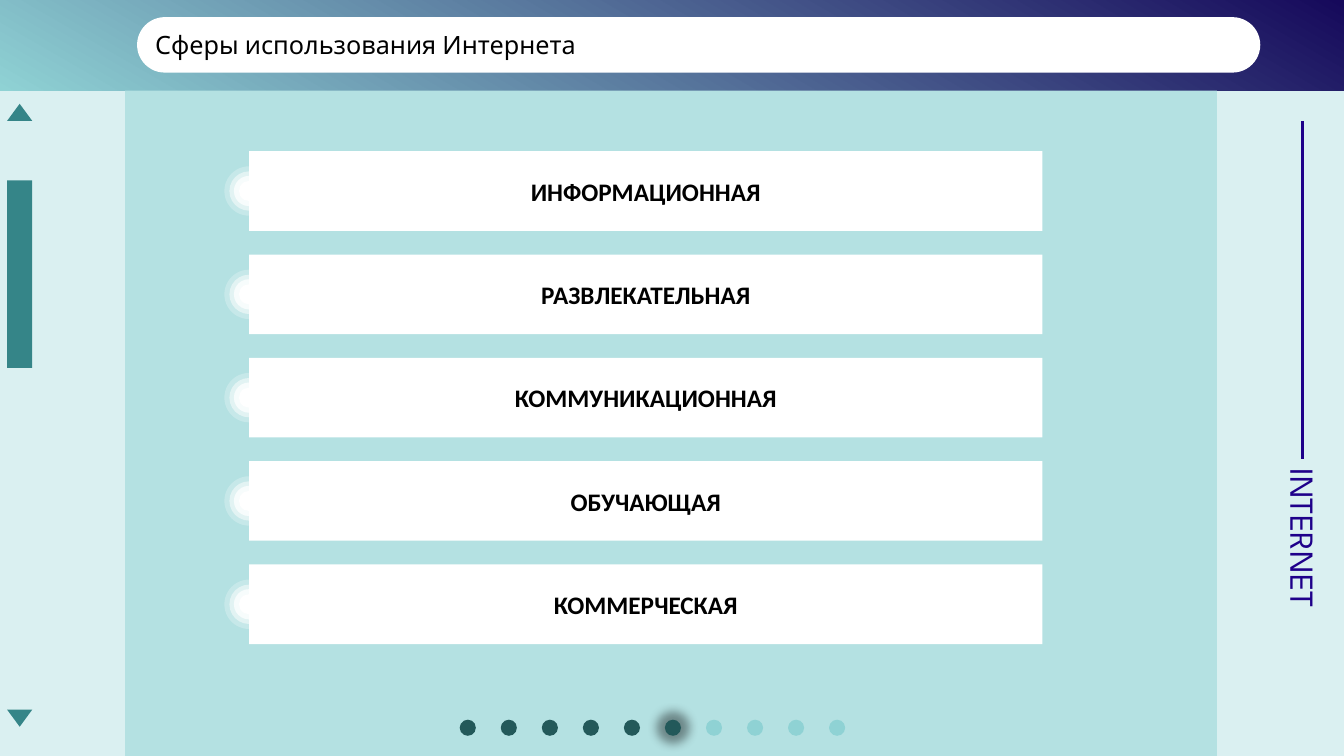
from lxml import etree
from pptx import Presentation
from pptx.dml.color import RGBColor
from pptx.enum.shapes import MSO_CONNECTOR, MSO_SHAPE
from pptx.enum.text import MSO_ANCHOR, MSO_AUTO_SIZE, PP_ALIGN
from pptx.oxml.ns import qn
from pptx.util import Inches, Pt

RECTANGLE, ROUNDED = MSO_SHAPE.RECTANGLE, MSO_SHAPE.ROUNDED_RECTANGLE
OVAL, TRIANGLE = MSO_SHAPE.OVAL, MSO_SHAPE.ISOSCELES_TRIANGLE
LEFT, CENTER = PP_ALIGN.LEFT, PP_ALIGN.CENTER

# Content
TITLE = "Сферы использования Интернета"
SIDE_LABEL = "INTERNET"
SPHERES = [
    "ИНФОРМАЦИОННАЯ",
    "РАЗВЛЕКАТЕЛЬНАЯ",
    "КОММУНИКАЦИОННАЯ",
    "ОБУЧАЮЩАЯ",
    "КОММЕРЧЕСКАЯ",
]
PAGE_COUNT, CURRENT_PAGE = 10, 6
HALO_RINGS = [(0.2, 100), (0.3, 75), (0.39, 50), (0.49, 25)]  # diameter, opacity

COLORS = {
    "background": "DAF0F1", "panel": "B4E1E2", "light": "8FD2D4",
    "navy": "16095B", "violet": "1E008A", "scroll": "358588",
    "page": "23595A", "white": "FFFFFF", "black": "000000",
}
TITLE_FONT, CARD_FONT = "League Spartan", "Calibri"

# Layout
CARD_LEFT, CARD_TOP, CARD_WIDTH, CARD_HEIGHT = 2.47, 1.5, 7.87, 0.79
CARD_STEP = 1.025
DOT_LEFT, DOT_TOP, DOT_SIZE, DOT_STEP = 4.56, 7.14, 0.16, 0.407


def color(name):
    return RGBColor.from_string(COLORS[name])


def add_block(kind, left, top, width, height, fill, opacity=100):
    shape = slide.shapes.add_shape(
        kind, Inches(left), Inches(top), Inches(width), Inches(height))
    shape.shadow.inherit = False
    shape.line.fill.background()
    shape.fill.solid()
    shape.fill.fore_color.rgb = color(fill)
    if opacity < 100:
        tint = shape.fill._xPr.find(".//" + qn("a:srgbClr"))
        etree.SubElement(tint, qn("a:alpha"), val=str(opacity * 1000))
    return shape


def write(shape, text, font, size=18, fill="black", bold=False, align=LEFT,
          anchor=MSO_ANCHOR.MIDDLE):
    frame = shape.text_frame
    frame.word_wrap = True
    frame.vertical_anchor = anchor
    paragraph = frame.paragraphs[0]
    paragraph.alignment = align
    run = paragraph.add_run()
    run.text = text
    run.font.name, run.font.size, run.font.bold = font, Pt(size), bold
    run.font.color.rgb = color(fill)


def add_glow(shape):
    effects = shape._element.spPr.find(qn("a:effectLst"))
    shadow = etree.SubElement(
        effects, qn("a:outerShdw"), blurRad=str(Inches(0.1)), sx="200000",
        sy="200000", algn="ctr", rotWithShape="0")
    tint = etree.SubElement(shadow, qn("a:srgbClr"), val=COLORS["black"])
    etree.SubElement(tint, qn("a:alpha"), val="40000")


presentation = Presentation()
presentation.slide_width, presentation.slide_height = Inches(13.33), Inches(7.5)
slide = presentation.slides.add_slide(presentation.slide_layouts[6])
slide.background.fill.solid()
slide.background.fill.fore_color.rgb = color("background")

# Side line and vertical label
side_line = slide.shapes.add_connector(
    MSO_CONNECTOR.STRAIGHT, Inches(12.92), Inches(1.2), Inches(12.92), Inches(4.55))
side_line.line.color.rgb = color("violet")
side_line.line.width = Pt(2.5)
etree.SubElement(side_line._element.spPr, qn("a:effectLst"))
label = slide.shapes.add_textbox(Inches(11.99), Inches(5.24), Inches(1.88), Inches(0.5))
label.rotation = 90
write(label, SIDE_LABEL, TITLE_FONT, size=24, fill="violet", anchor=MSO_ANCHOR.TOP)
label.text_frame.auto_size = MSO_AUTO_SIZE.SHAPE_TO_FIT_TEXT

# Header with title bar
header = add_block(RECTANGLE, 0, 0, 13.33, 0.9, "light")
header.fill.gradient()
header.fill.gradient_angle = 60
for stop, position, name in zip(header.fill.gradient_stops, (0, 1), ("light", "navy")):
    stop.position = position
    stop.color.rgb = color(name)
title_bar = add_block(ROUNDED, 1.36, 0.17, 11.14, 0.55, "white")
title_bar.adjustments[0] = 0.5
write(title_bar, TITLE, TITLE_FONT)

# Scroll bar
for top, rotation in ((1.03, 0), (7.04, 180)):
    add_block(TRIANGLE, 0.07, top, 0.25, 0.17, "scroll").rotation = rotation
add_block(RECTANGLE, 0.07, 1.79, 0.25, 1.86, "scroll")

# Main panel
add_block(RECTANGLE, 1.24, 0.9, 10.83, 6.6, "panel")

# Cards, each over a halo centred on its left edge
for index, sphere in enumerate(SPHERES):
    top = CARD_TOP + index * CARD_STEP
    middle = top + CARD_HEIGHT / 2
    for diameter, opacity in HALO_RINGS:
        add_block(OVAL, CARD_LEFT - diameter / 2, middle - diameter / 2,
                  diameter, diameter, "white", opacity)
    card = add_block(RECTANGLE, CARD_LEFT, top, CARD_WIDTH, CARD_HEIGHT, "white")
    write(card, sphere, CARD_FONT, bold=True, align=CENTER)

# Page dots
for page in range(1, PAGE_COUNT + 1):
    dot = add_block(OVAL, DOT_LEFT + (page - 1) * DOT_STEP, DOT_TOP, DOT_SIZE, DOT_SIZE,
                    "page" if page <= CURRENT_PAGE else "light")
    if page == CURRENT_PAGE:
        add_glow(dot)

presentation.save("out.pptx")
